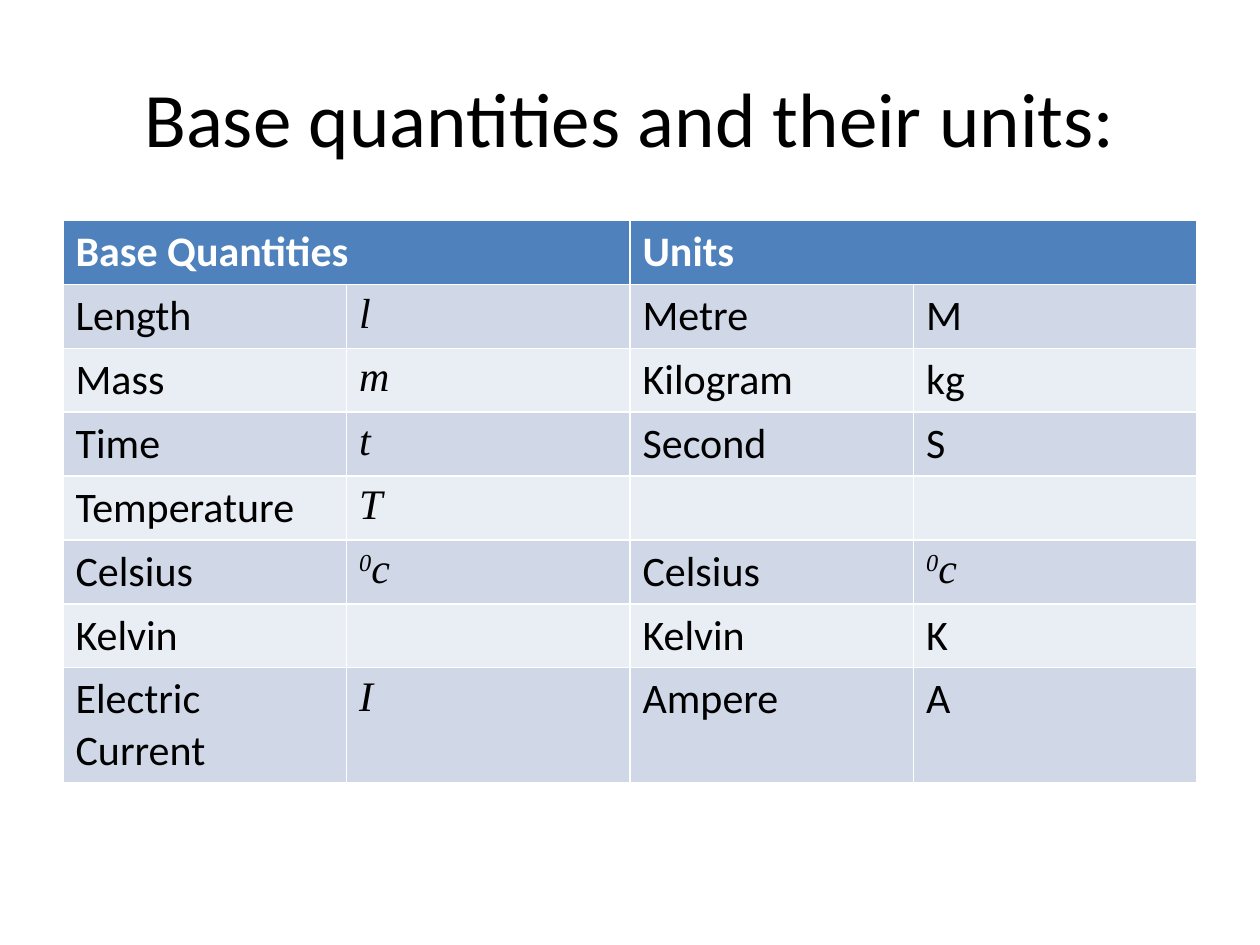
import dataclasses

import pptx
import pptx.dml.color
import pptx.enum.text
import pptx.util


@dataclasses.dataclass(frozen=True)
class Theme:
    body_font: str = "Calibri"
    symbol_font: str = "Times New Roman"
    title_size: int = 44
    table_size: int = 24
    ink: str = "000000"
    header_ink: str = "FFFFFF"
    header_fill: str = "4F81BD"
    band_fills: tuple = ("D0D8E8", "E9EDF4")


@dataclasses.dataclass(frozen=True)
class Symbol:
    letter: str
    raised: str = ""


THEME = Theme()
TITLE = "Base quantities and their units:"
HEADERS = ["Base Quantities", "Units"]
DEGREE = Symbol("c", raised="0")
ROWS = [
    ("Length", Symbol("l"), "Metre", "M"),
    ("Mass", Symbol("m"), "Kilogram", "kg"),
    ("Time", Symbol("t"), "Second", "S"),
    ("Temperature", Symbol("T"), "", ""),
    ("Celsius", DEGREE, "Celsius", DEGREE),
    ("Kelvin", "", "Kelvin", "K"),
    ("Electric Current", Symbol("I"), "Ampere", "A"),
]
COLUMNS = len(ROWS[0])
HEADER_SPAN = COLUMNS // len(HEADERS)
MARGIN = 0.5
ROW_HEIGHT = 0.41


def color(value):
    return pptx.dml.color.RGBColor.from_string(value)


def style_span(span, size, ink, name=THEME.body_font, bold=False, italic=False):
    span.font.name = name
    span.font.size = pptx.util.Pt(size)
    span.font.color.rgb = color(ink)
    span.font.bold = bold
    span.font.italic = italic


def fill_cell(cell, content, fill, ink=THEME.ink, bold=False):
    cell.fill.solid()
    cell.fill.fore_color.rgb = color(fill)
    para = cell.text_frame.paragraphs[0]
    if isinstance(content, Symbol):
        for text in filter(None, (content.raised, content.letter)):
            span = para.add_run()
            span.text = text
            style_span(span, THEME.table_size, ink, THEME.symbol_font, italic=True)
            if text == content.raised:
                span.font._element.set("baseline", "30000")
    elif content:
        para.text = content
        style_span(para.runs[0], THEME.table_size, ink, bold=bold)


def add_title(page):
    box = page.shapes.title
    box.left, box.top, box.width, box.height = map(
        pptx.util.Inches, (MARGIN, 0.3, 9, 1.25))
    box.text_frame.text = TITLE
    box.text_frame.vertical_anchor = pptx.enum.text.MSO_ANCHOR.MIDDLE
    para = box.text_frame.paragraphs[0]
    para.alignment = pptx.enum.text.PP_ALIGN.CENTER
    style_span(para.runs[0], THEME.title_size, THEME.ink)


def add_units_table(page):
    row_count = len(ROWS) + 1
    frame = page.shapes.add_table(
        row_count, COLUMNS,
        *map(pptx.util.Inches, (MARGIN, 1.75, 9, ROW_HEIGHT * row_count)))
    table = frame.table
    for index, header in enumerate(HEADERS):
        first = index * HEADER_SPAN
        cell = table.cell(0, first)
        cell.merge(table.cell(0, first + HEADER_SPAN - 1))
        fill_cell(cell, header, THEME.header_fill, THEME.header_ink, bold=True)
    for row, contents in enumerate(ROWS, start=1):
        band = THEME.band_fills[(row - 1) % len(THEME.band_fills)]
        for column, content in enumerate(contents):
            fill_cell(table.cell(row, column), content, band)


def main():
    deck = pptx.Presentation()
    deck.slide_width = pptx.util.Inches(10)
    deck.slide_height = pptx.util.Inches(7.5)
    page = deck.slides.add_slide(deck.slide_layouts.get_by_name("Title Only"))
    add_title(page)
    add_units_table(page)
    deck.save("out.pptx")


if __name__ == "__main__":
    main()
